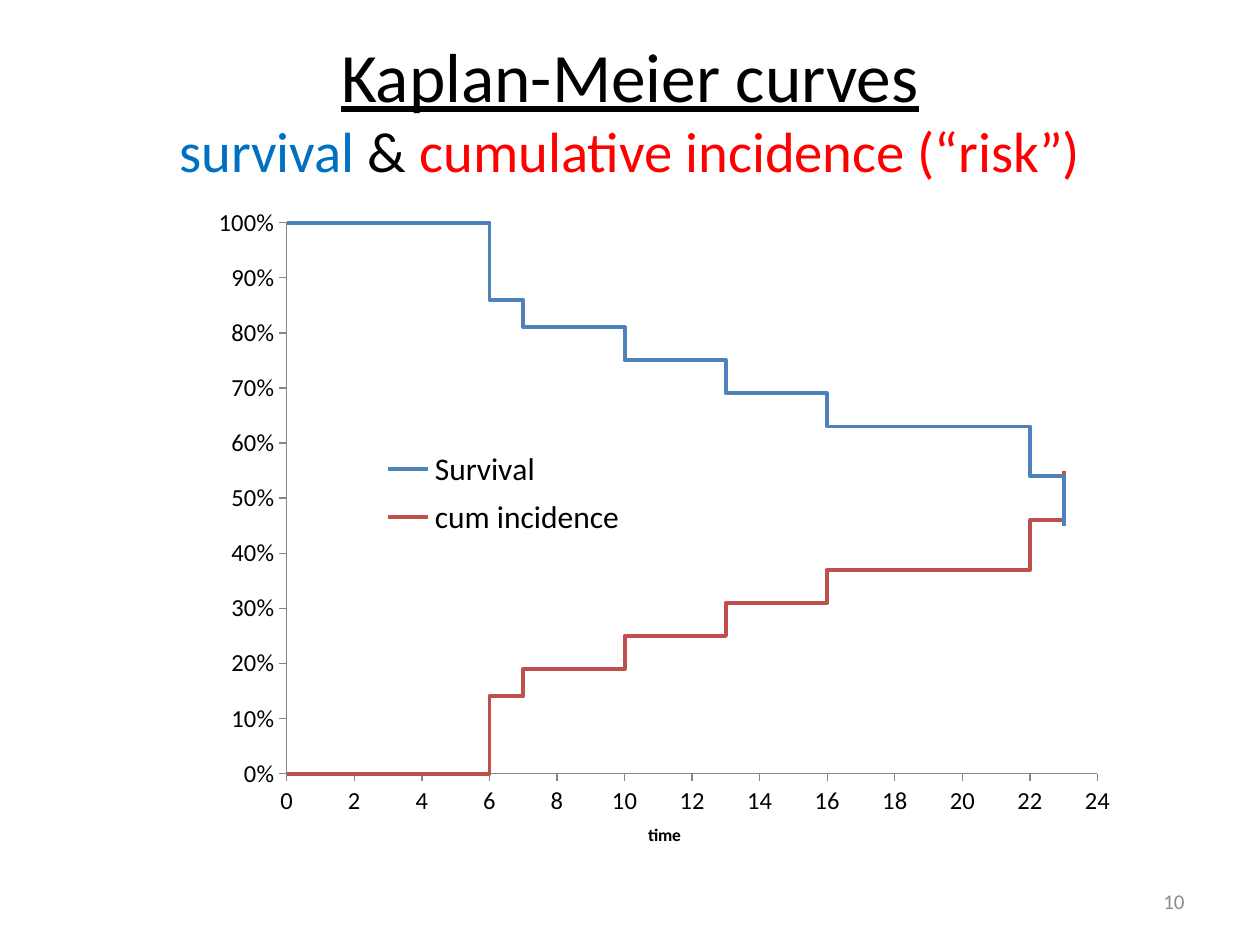
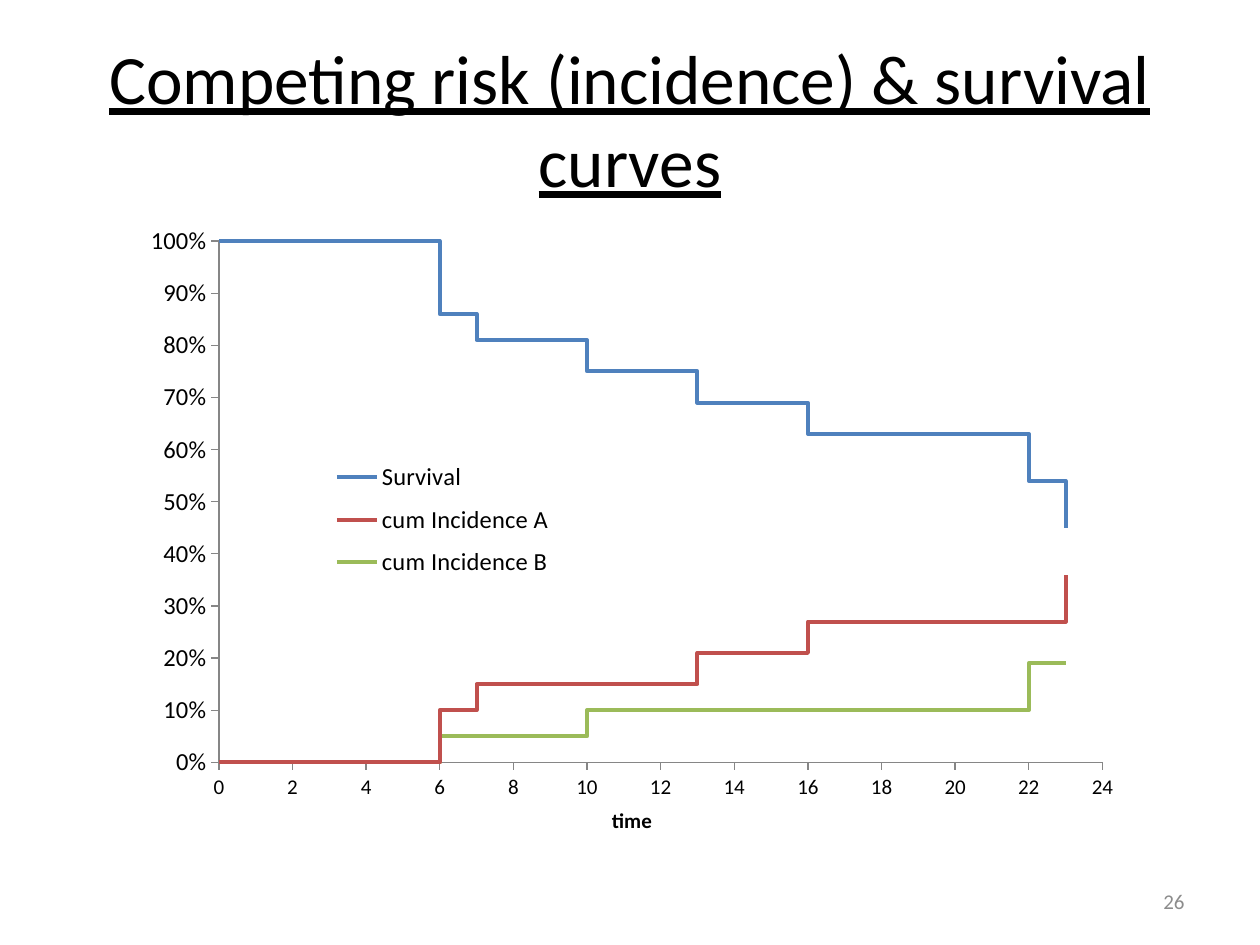
from dataclasses import dataclass

from lxml import etree
from pptx import Presentation
from pptx.chart import data as cd
from pptx.dml.color import RGBColor
from pptx.enum import chart as ec, text as et
from pptx.oxml import ns
from pptx.util import Pt


@dataclass(frozen=True)
class Theme:
    font: str = "Calibri"
    ink: str = "000000"
    blue: str = "0070C0"
    red: str = "FF0000"
    mute: str = "8C8C8C"
    axis: str = "868686"
    lines: tuple = ("4F81BD", "C0504D", "9BBB59")
    head: float = 39.6
    sub: float = 32.4
    foot: float = 12
    tick: float = 14
    stroke: float = 2.25


T = Theme()
TIMES = [0, 6, 7, 10, 13, 16, 22, 23]
ALIVE = [1, 0.86, 0.81, 0.75, 0.69, 0.63, 0.54, 0.45]
DEAD = [0, 0.14, 0.19, 0.25, 0.31, 0.37, 0.46, 0.55]
RISK_A = [0, 0.1, 0.15, 0.15, 0.21, 0.27, 0.27, 0.36]
RISK_B = [0, 0.05, 0.05, 0.1, 0.1, 0.1, 0.19, 0.19]
FOOT = (516, 500.4, 168, 28.8)


def style(font, size, color=T.ink, bold=False, under=False):
    font.name, font.size = T.font, Pt(size)
    font.bold, font.underline = bold, under
    font.color.rgb = RGBColor.from_string(color)


def write(slide, box, parts, align):
    """Add a text box; parts are (words, format) pairs, "\\n" breaks the line."""
    frame = slide.shapes.add_textbox(*map(Pt, box)).text_frame
    frame.word_wrap = True
    frame.vertical_anchor = et.MSO_ANCHOR.MIDDLE
    para = frame.paragraphs[0]
    para.alignment = align
    for words, form in parts:
        if words == "\n":
            para.add_line_break()
            continue
        run = para.add_run()
        run.text = words
        style(run.font, **form)


def place(node, box, inner=False):
    """Give a plot area or legend a fixed box, as fractions of the chart."""
    for old in node.findall(ns.qn("c:layout")):
        node.remove(old)
    layout = etree.Element(ns.qn("c:layout"))
    manual = etree.SubElement(layout, ns.qn("c:manualLayout"))
    rules = [("layoutTarget", "inner")] if inner else []
    rules += [("xMode", "edge"), ("yMode", "edge"), *zip("xywh", box)]
    for tag, val in rules:
        etree.SubElement(manual, ns.qn("c:" + tag)).set("val", str(val))
    node.insert(0 if node.find(ns.qn("c:legendPos")) is None else 1, layout)


def set_axis(axis, top, step, form, size):
    axis.minimum_scale, axis.maximum_scale, axis.major_unit = 0, top, step
    axis.has_major_gridlines = False
    axis.major_tick_mark = ec.XL_TICK_MARK.OUTSIDE
    axis.minor_tick_mark = ec.XL_TICK_MARK.NONE
    axis.tick_labels.number_format = form
    axis.tick_labels.number_format_is_linked = False
    style(axis.tick_labels.font, size)
    axis.format.line.width = Pt(0.75)
    axis.format.line.color.rgb = RGBColor.from_string(T.axis)


def draw_steps(slide, box, curves, plot, key, sizes):
    """Draw step curves; sizes are those of time labels, time title and legend."""
    data = cd.XyChartData()
    for name, levels in curves:
        series = data.add_series(name)
        xs = [t for t in TIMES for _ in range(2)][1:]
        ys = [v for v in levels for _ in range(2)][:-1]
        for x, y in zip(xs, ys):
            series.add_data_point(x, y)
    chart = slide.shapes.add_chart(
        ec.XL_CHART_TYPE.XY_SCATTER_LINES_NO_MARKERS, *map(Pt, box), data).chart
    label, title, legend = sizes
    style(chart.font, 10)
    chart.has_title = False
    chart.plots[0].vary_by_categories = False
    for series, color in zip(chart.plots[0].series, T.lines):
        series.smooth = False
        series.marker.style = ec.XL_MARKER_STYLE.NONE
        series.format.line.width = Pt(T.stroke)
        series.format.line.color.rgb = RGBColor.from_string(color)

    set_axis(chart.category_axis, 24, 2, "General", label)
    set_axis(chart.value_axis, 1, 0.1, "0%", T.tick)
    chart.value_axis.has_title = False
    run = chart.category_axis.axis_title.text_frame.paragraphs[0].add_run()
    run.text = "time"
    style(run.font, title, bold=True)

    chart.has_legend = True
    chart.legend.position = ec.XL_LEGEND_POSITION.RIGHT
    chart.legend.include_in_layout = False
    style(chart.legend.font, legend)
    place(chart.legend._element, key)
    place(chart._chartSpace.chart.plotArea, plot, inner=True)


def add_page(deck, number, title, depth):
    slide = deck.slides.add_slide(deck.slide_layouts[6])
    write(slide, (36, 21.6, 648, depth), title, et.PP_ALIGN.CENTER)
    write(slide, FOOT, [(number, dict(size=T.foot, color=T.mute))],
          et.PP_ALIGN.RIGHT)
    return slide


def main():
    deck = Presentation()
    deck.slide_width, deck.slide_height = Pt(720), Pt(540)
    head = dict(size=T.head, under=True)

    title = [("Kaplan-Meier curves", head), ("\n", {}),
             ("survival", dict(size=T.sub, color=T.blue)),
             (" & ", dict(size=T.sub)),
             ("cumulative incidence (“risk”)", dict(size=T.sub, color=T.red))]
    slide = add_page(deck, "10", title, 80.6)
    draw_steps(slide, (90, 108, 582, 378),
               [("Survival", ALIVE), ("cum incidence", DEAD)],
               plot=(0.127, 0.051, 0.796, 0.833),
               key=(0.21, 0.38, 0.26, 0.16), sizes=(14, 10, 18))

    title = [("Competing risk (incidence) & survival curves", head)]
    slide = add_page(deck, "26", title, 92.2)
    draw_steps(slide, (48, 114, 612, 366),
               [("Survival", ALIVE), ("cum Incidence A", RISK_A),
                ("cum Incidence B", RISK_B)],
               plot=(0.126, 0.065, 0.825, 0.814),
               key=(0.21, 0.39, 0.25, 0.22), sizes=(12, 12, 14))
    deck.save("out.pptx")


if __name__ == "__main__":
    main()
